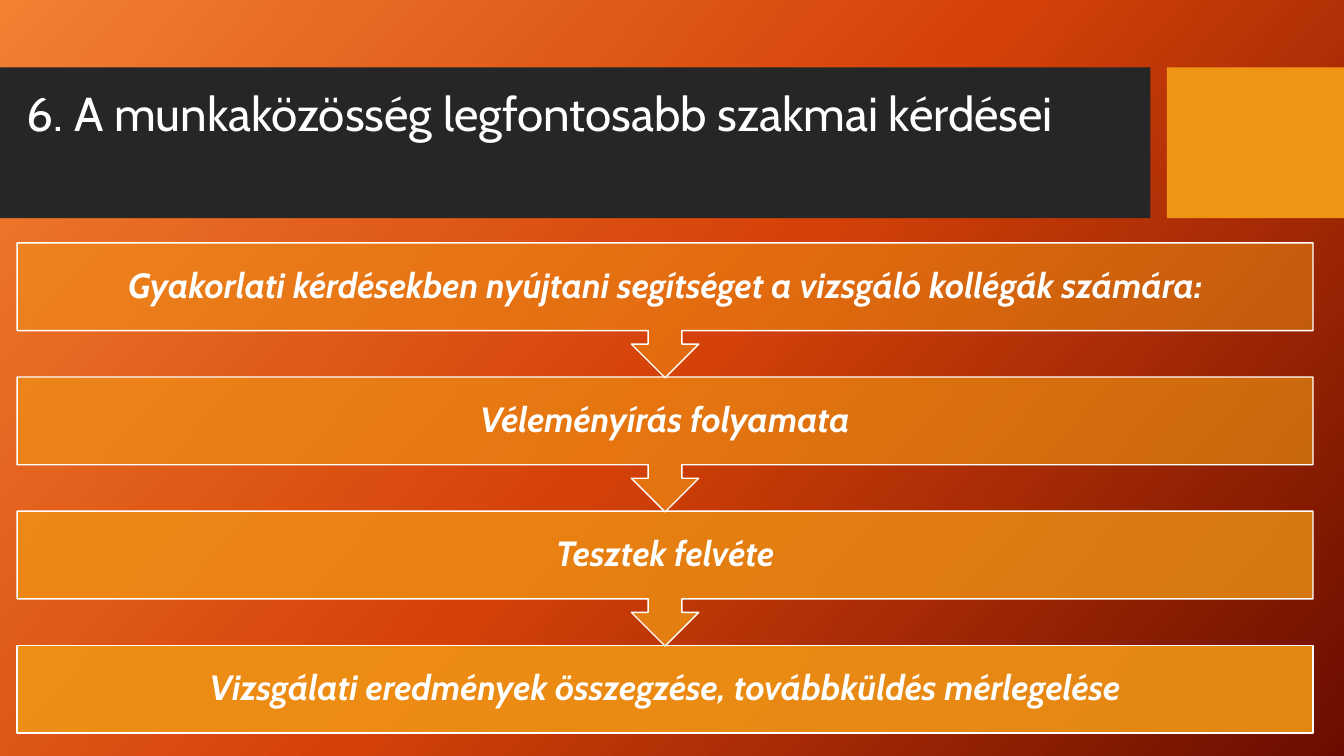
import pptx
import pptx.util
import pptx.dml.color
import pptx.enum.shapes
import pptx.enum.text
import pptx.oxml
import pptx.oxml.ns

Cm = pptx.util.Cm
Pt = pptx.util.Pt
Kind = pptx.enum.shapes.MSO_SHAPE
Align = pptx.enum.text.PP_ALIGN
Anchor = pptx.enum.text.MSO_ANCHOR
qn = pptx.oxml.ns.qn

hues = {"light": "F18031", "mid": "D54209", "deep": "6A0D00",
        "dark": "262626", "gold": "F09415", "white": "FFFFFF"}
steps = ["Gyakorlati kérdésekben nyújtani segítséget a vizsgáló kollégák számára:",
         "Véleményírás folyamata",
         "Tesztek felvéte",
         "Vizsgálati eredmények összegzése, továbbküldés mérlegelése"]
head = {"name": "Cabin", "size": Pt(34), "bold": False, "italic": False}
body = {"name": "Cabin", "size": Pt(25), "bold": True, "italic": True}


def add_box(kind, left, top, width, height, hue):
    box = slide.shapes.add_shape(kind, Cm(left), Cm(top), Cm(width), Cm(height))
    box.shadow.inherit = False
    box.fill.solid()
    box.fill.fore_color.rgb = pptx.dml.color.RGBColor.from_string(hues[hue])
    box.line.fill.background()
    return box


def add_text(text, left, top, width, height, look, frame, align):
    box = slide.shapes.add_textbox(Cm(left), Cm(top), Cm(width), Cm(height))
    for key, value in frame.items():
        setattr(box.text_frame, key, value)
    para = box.text_frame.paragraphs[0]
    para.alignment = align
    para.line_spacing = 0.9
    run = para.add_run()
    run.text = text
    for key, value in look.items():
        setattr(run.font, key, value)
    run.font.color.rgb = pptx.dml.color.RGBColor.from_string(hues["white"])


deck = pptx.Presentation()
deck.slide_width = Cm(33.87)
deck.slide_height = Cm(19.05)
slide = deck.slides.add_slide(deck.slide_layouts[6])

slide.background.fill.gradient()
grad = next(slide._element.iter(qn("a:gradFill")))
stops = grad.find(qn("a:gsLst"))
for stop in list(stops):
    stops.remove(stop)
for place, hue in enumerate(("light", "mid", "deep")):
    stops.append(pptx.oxml.parse_xml(
        f'<a:gs {pptx.oxml.ns.nsdecls("a")} pos="{place * 50000}">'
        f'<a:srgbClr val="{hues[hue]}"/></a:gs>'))
grad.find(qn("a:lin")).set("ang", str(42 * 60000))

add_box(Kind.RECTANGLE, 0, 1.7, 28.99, 3.8, "dark")
add_box(Kind.RECTANGLE, 29.41, 1.7, 4.46, 3.8, "gold")
add_text("6. A munkaközösség legfontosabb szakmai kérdései",
         0.43, 2.08, 28.17, 3, head,
         {"word_wrap": True, "vertical_anchor": Anchor.TOP, "margin_top": Cm(0.19)},
         Align.LEFT)

pad = Cm(0.48)
inner = {"word_wrap": True, "vertical_anchor": Anchor.MIDDLE, "margin_left": pad,
         "margin_right": pad, "margin_top": pad, "margin_bottom": pad}
left, first, width, pitch, tall = 0.43, 6.12, 32.66, 3.38, 2.21
last = len(steps) - 1
for row in range(last, -1, -1):
    top = first + row * pitch
    if row == last:
        bar = add_box(Kind.RECTANGLE, left, top, width, tall, "gold")
    else:
        bar = add_box(Kind.UP_ARROW_CALLOUT, left, top, width, 3.4, "gold")
        bar.rotation = 180
    bar.line.color.rgb = pptx.dml.color.RGBColor.from_string(hues["white"])
    bar.line.width = Pt(1)
    tint = bar._element.spPr.find(qn("a:solidFill"))[0]
    alpha = pptx.oxml.parse_xml(f'<a:alpha {pptx.oxml.ns.nsdecls("a")}/>')
    alpha.set("val", str(round(50000 + row * 40000 / last)))
    tint.append(alpha)
    add_text(steps[row], left, top, width, tall, body, inner, Align.CENTER)

deck.save("out.pptx")
